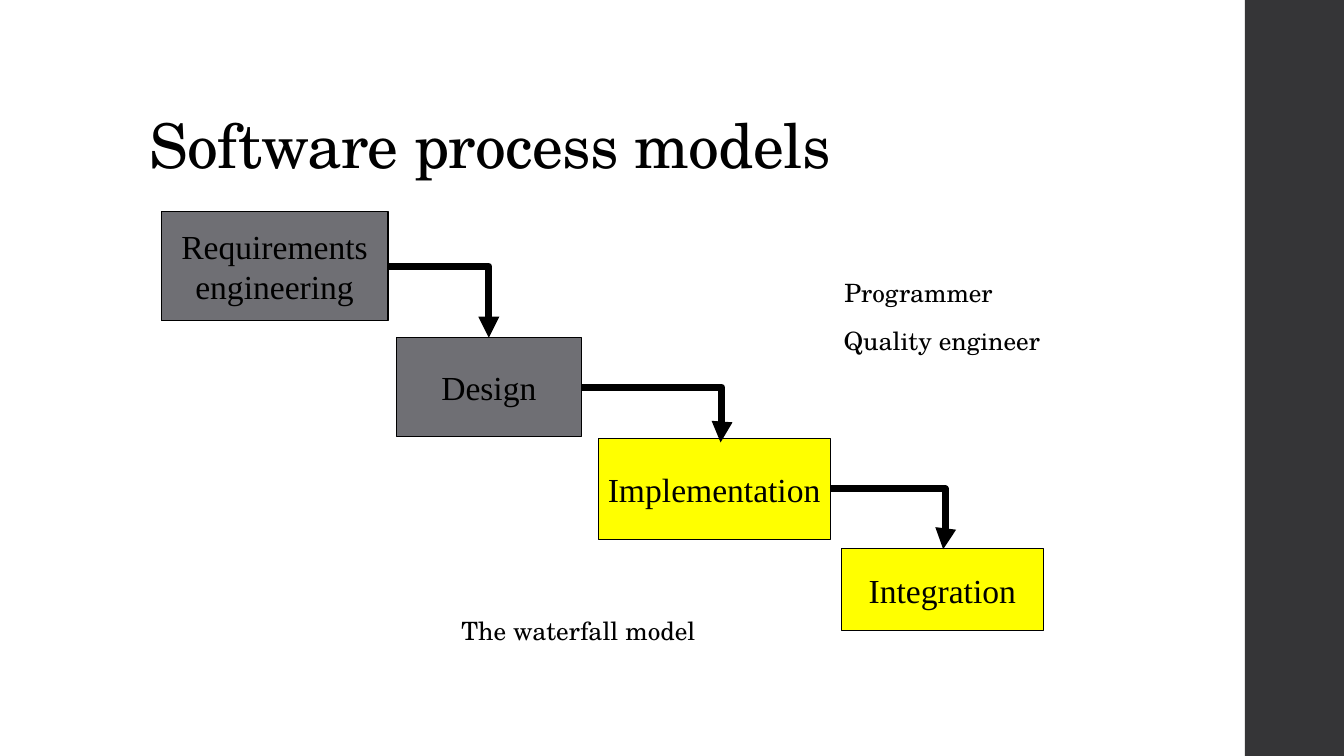
from pptx import Presentation
from pptx import util as u
from pptx.dml.color import RGBColor
from pptx.enum import shapes, text
from pptx.oxml.ns import qn
from lxml import etree

SERIF, SCHOLA = "Times New Roman", "TeX Gyre Schola"
BLACK, GREY, YELLOW, CHARCOAL = "000000", "6F6F74", "FFFF00", "353537"


def colour(value):
    return RGBColor.from_string(value)


def write(frame, content, font=SCHOLA, size=18, color=BLACK, align=text.PP_ALIGN.LEFT,
          anchor=text.MSO_ANCHOR.TOP, wrap=False, grow=False, leading=None, tracking=None):
    frame.word_wrap = wrap
    frame.auto_size = text.MSO_AUTO_SIZE.SHAPE_TO_FIT_TEXT if grow else text.MSO_AUTO_SIZE.NONE
    frame.vertical_anchor = anchor
    frame.text = content
    for paragraph in frame.paragraphs:
        paragraph.alignment = align
        paragraph.line_spacing = leading
        for run in paragraph.runs:
            run.font.name = font
            run.font.size = u.Pt(size)
            run.font.color.rgb = colour(color)
            if tracking is not None:
                run.font._element.set("spc", str(int(tracking * 100)))


class ProcessSlide:
    outline = 0.75
    arrow_width = 5

    def __init__(self, deck):
        self.slide = deck.slides.add_slide(deck.slide_layouts[5])

    def title(self, content, *place):
        heading = self.slide.shapes.title
        heading.left, heading.top, heading.width, heading.height = map(u.Cm, place)
        write(heading.text_frame, content, size=44, anchor=text.MSO_ANCHOR.BOTTOM,
              wrap=True, leading=0.9, tracking=-0.5)

    def panel(self, fill, *place):
        block = self.slide.shapes.add_shape(shapes.MSO_SHAPE.RECTANGLE, *map(u.Cm, place))
        block.shadow.inherit = False
        block.fill.solid()
        block.fill.fore_color.rgb = colour(fill)
        block.line.fill.background()
        return block

    def stage(self, content, fill, *place):
        box = self.panel(fill, *place)
        box.line.color.rgb = colour(BLACK)
        box.line.width = u.Pt(self.outline)
        write(box.text_frame, content, font=SERIF, size=24,
              align=text.PP_ALIGN.CENTER, anchor=text.MSO_ANCHOR.MIDDLE)
        return box

    def arrow(self, source, x, y, bend=None):
        flow = self.slide.shapes.add_connector(
            shapes.MSO_CONNECTOR.ELBOW, source.left + source.width,
            source.top + source.height // 2, u.Cm(x), u.Cm(y))
        flow.line.color.rgb = colour(BLACK)
        flow.line.width = u.Pt(self.arrow_width)
        etree.SubElement(flow.line._get_or_add_ln(), qn("a:tailEnd"), type="triangle")
        properties = flow._element.spPr
        etree.SubElement(properties, qn("a:effectLst"))
        geometry = properties.find(qn("a:prstGeom"))
        if bend is None:
            geometry.set("prst", "bentConnector2")
        else:
            etree.SubElement(geometry.find(qn("a:avLst")), qn("a:gd"),
                             name="adj1", fmla=f"val {round(bend * 100000)}")

    def label(self, content, *place):
        caption = self.slide.shapes.add_textbox(*map(u.Cm, place))
        write(caption.text_frame, content, grow=True)


def main():
    deck = Presentation()
    deck.slide_width, deck.slide_height = u.Cm(33.87), u.Cm(19.05)
    page = ProcessSlide(deck)

    page.panel(CHARCOAL, 31.37, 0, 2.5, 19.05)
    page.title("Software process models", 3.51, 1.02, 26.92, 3.68)

    requirements = page.stage("Requirements\nengineering", GREY, 4.06, 5.33, 5.72, 2.76)
    design = page.stage("Design", GREY, 9.99, 8.51, 4.66, 2.5)
    implementation = page.stage("Implementation", YELLOW, 15.08, 11.05, 5.84, 2.54)
    page.stage("Integration", YELLOW, 21.21, 13.82, 5.08, 2.08)

    page.arrow(requirements, 12.32, 8.51)
    page.arrow(design, 18.16, 11.15, bend=1.01)
    page.arrow(implementation, 23.77, 13.84, bend=1.02)

    page.label("The waterfall model", 11.38, 15.37, 6.65, 1.02)
    page.label("Programmer", 21.03, 6.86, 4.27, 1.02)
    page.label("Quality engineer", 21.01, 8.08, 5.51, 1.02)

    deck.save("out.pptx")


if __name__ == "__main__":
    main()
